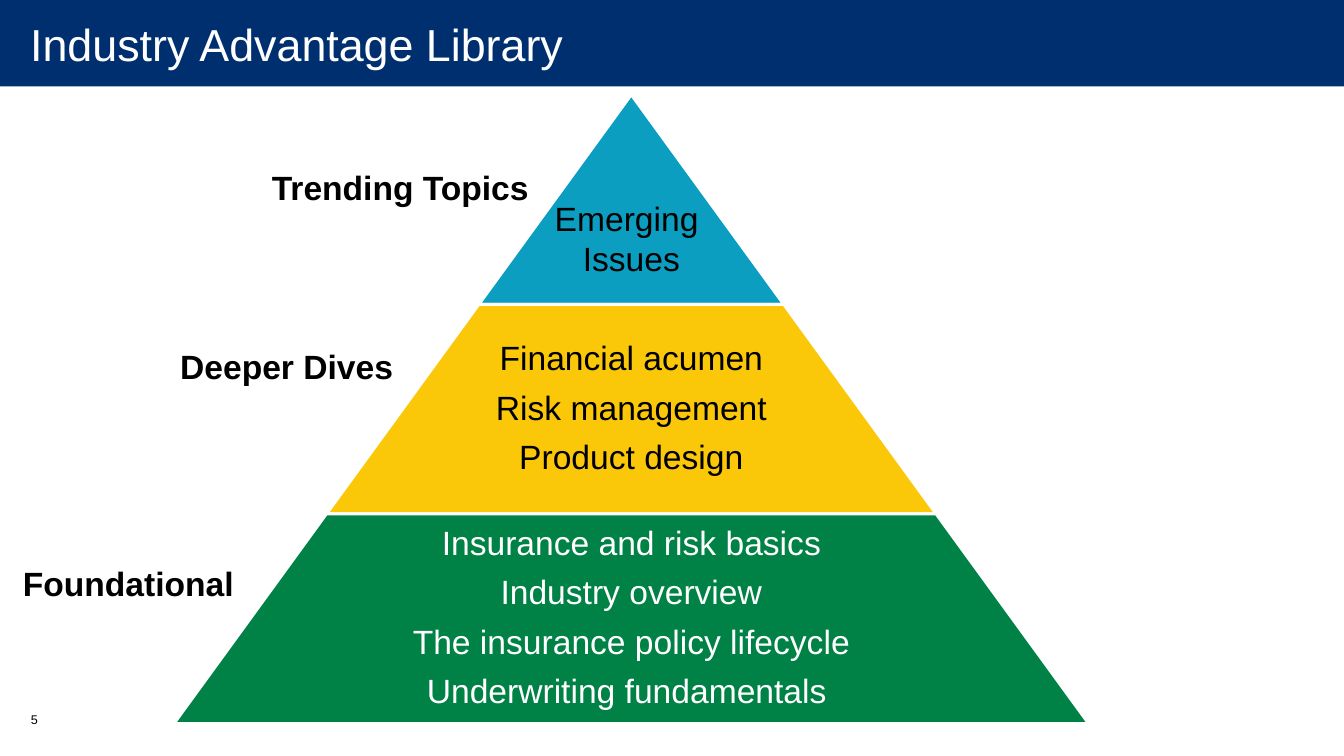
from pptx import Presentation
from pptx import util as u
from pptx.dml import color
from pptx.enum import shapes, text

NAVY, BLACK, WHITE = "002F70", "000000", "FFFFFF"
MID, LEFT = text.PP_ALIGN.CENTER, text.PP_ALIGN.LEFT


def tint(code):
    return color.RGBColor.from_string(code)


class Deck:
    font = "Arial"
    size = 24

    def __init__(self, wide, high):
        self.prs = Presentation()
        self.prs.slide_width, self.prs.slide_height = u.Cm(wide), u.Cm(high)
        self.wide = wide
        self.slide = self.prs.slides.add_slide(self.prs.slide_layouts[5])

    def place(self, item, box):
        for name, value in zip(("left", "top", "width", "height"), box):
            setattr(item, name, u.Cm(value))

    def fill_text(self, frame, lines, ink=BLACK, size=None, bold=False,
                  pads=None, para=None, **frames):
        """Fill a text frame; pads are left, top, right, bottom in cm."""
        frames = {"word_wrap": True, **frames}
        for side, pad in zip(("left", "top", "right", "bottom"), pads or ()):
            frames["margin_" + side] = u.Cm(pad)
        for name, value in frames.items():
            setattr(frame, name, value)
        look = {"name": self.font, "size": u.Pt(size or self.size), "bold": bold}
        for i, line in enumerate(lines):
            p = frame.paragraphs[0] if i == 0 else frame.add_paragraph()
            for name, value in (para or {}).items():
                setattr(p, name, value)
            run = p.add_run()
            run.text = line
            for name, value in look.items():
                setattr(run.font, name, value)
            run.font.color.rgb = tint(ink)

    def shape(self, kind, box, fill, line=None):
        item = self.slide.shapes.add_shape(kind, *map(u.Cm, box))
        item.shadow.inherit = False
        item.fill.solid()
        item.fill.fore_color.rgb = tint(fill)
        if line:
            item.line.color.rgb = tint(line)
            item.line.width = u.Pt(2)
        else:
            item.line.fill.background()
        return item

    def title(self, words, high):
        bar = self.shape(shapes.MSO_SHAPE.RECTANGLE,
                         (0, 0, self.wide, high), NAVY)
        head = self.slide.shapes.title
        head._element.addprevious(bar._element)
        self.place(head, (0, 0, self.wide, high))
        self.fill_text(head.text_frame, [words], WHITE, 32,
                       pads=(0.76, 0, 0.5, 0), para={"alignment": LEFT},
                       word_wrap=False, vertical_anchor=text.MSO_ANCHOR.MIDDLE,
                       auto_size=text.MSO_AUTO_SIZE.NONE)

    def tier(self, mid, top, half, step, high, fill):
        """One pyramid level, step cm narrower per side at its top."""
        item = self.shape(shapes.MSO_SHAPE.TRAPEZOID,
                          (mid - half, top, 2 * half, high), fill, WHITE)
        item.adjustments[0] = step / min(2 * half, high)

    def text(self, box, lines, **style):
        item = self.slide.shapes.add_textbox(*map(u.Cm, box))
        self.fill_text(item.text_frame, lines, **style)

    def label(self, left, top, wide, words):
        self.text((left, top, wide, 1.28), [words], bold=True, word_wrap=False,
                  auto_size=text.MSO_AUTO_SIZE.SHAPE_TO_FIT_TEXT)


def main():
    deck = Deck(33.87, 19.05)
    deck.title("Industry Advantage Library", 2.18)

    # Pyramid, from the tip down
    mid, top, high, step = 15.91, 2.39, 5.28, 3.84
    tiers = [
        ("0B9EC1", BLACK, []),
        ("FAC809", BLACK,
         ["Financial acumen", "Risk management", "Product design"]),
        ("008145", WHITE,
         ["Insurance and risk basics", "Industry overview",
          "The insurance policy lifecycle", "Underwriting fundamentals "]),
    ]
    for i, (fill, ink, lines) in enumerate(tiers):
        half, y = step * (i + 1), top + high * i
        deck.tier(mid, y, half, step, high, fill)
        if lines:
            wide = 1.3 * half
            deck.text((mid - wide / 2, y, wide, high), lines, ink=ink,
                      pads=[0.08] * 4,
                      vertical_anchor=text.MSO_ANCHOR.MIDDLE,
                      para={"alignment": MID, "line_spacing": 0.9,
                            "space_after": u.Pt(9.5)})

    # Page number
    deck.text((0.53, 17.81, 1.24, 1.02), ["5"], size=9)

    # Level names
    deck.label(0.33, 14.05, 5.89, "Foundational")
    deck.label(4.29, 8.59, 5.94, "Deeper Dives")
    deck.label(6.6, 4.09, 7.16, "Trending Topics")

    # Words in the tip
    deck.text((mid - step, 4.85, 2 * step, 2.31), ["Emerging ", "Issues"],
              para={"alignment": MID})

    deck.prs.save("out.pptx")


if __name__ == "__main__":
    main()
